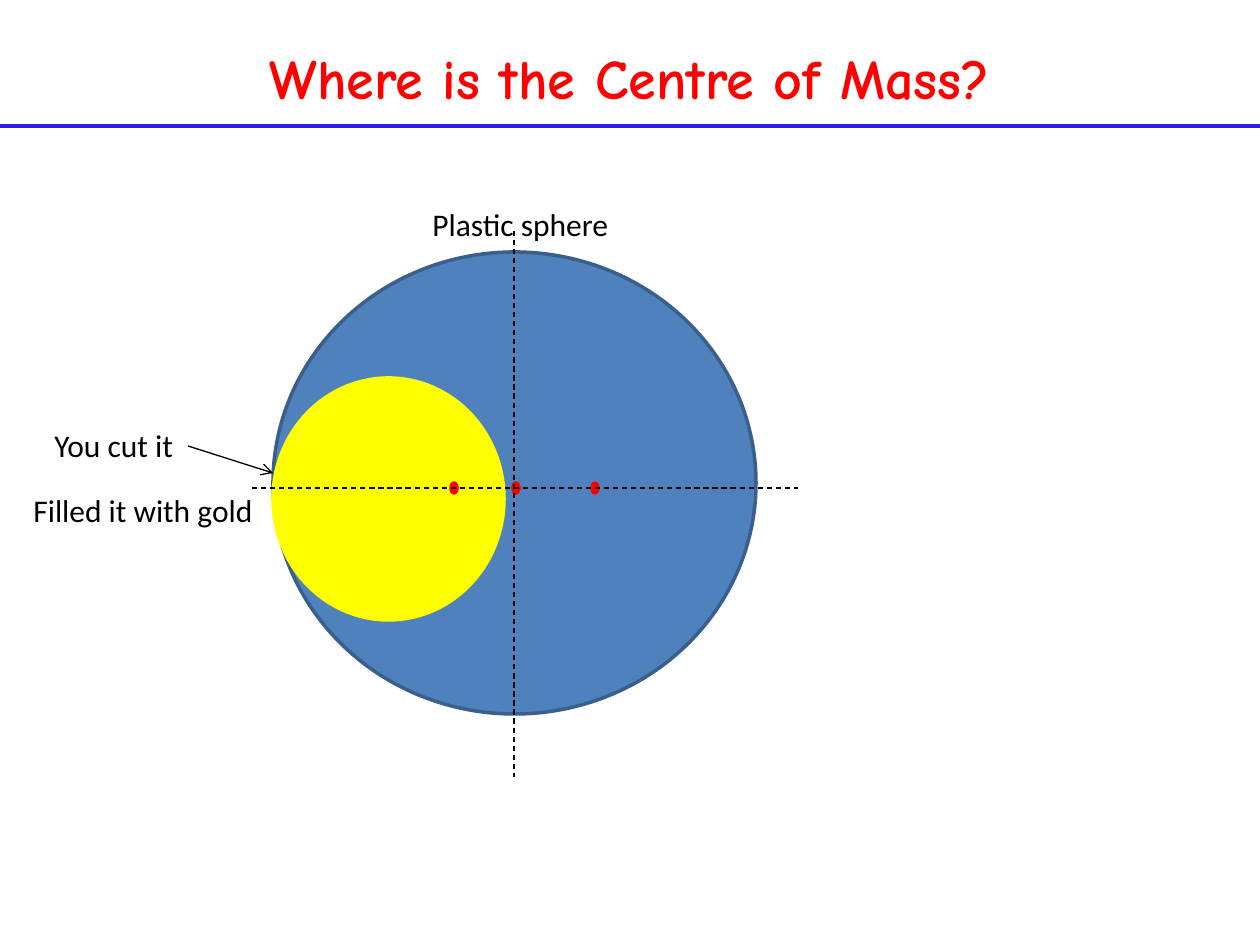
from lxml.etree import SubElement
from pptx import Presentation
from pptx.dml.color import RGBColor
from pptx.enum.dml import MSO_LINE
from pptx.enum.shapes import MSO_CONNECTOR, MSO_SHAPE
from pptx.enum.text import MSO_ANCHOR, MSO_AUTO_SIZE, PP_ALIGN
from pptx.oxml.ns import qn
from pptx.util import Emu, Pt

SCALE = 914400 / 126
COLORS = {
    "rule": "331AEC",
    "red": "FF0000",
    "blue": "4F81BD",
    "edge": "3A5F8C",
    "gold": "FFFF00",
    "ink": "000000",
}
TITLE = {"name": "Comic Neue", "size": Pt(32), "bold": True}
LABEL = {"name": "Calibri", "size": Pt(18), "bold": False}


def px(*values):
    return [Emu(round(v * SCALE)) for v in values]


def tint(name):
    return RGBColor.from_string(COLORS[name])


def add_text(slide, box, words, style, color, frame, align=PP_ALIGN.LEFT):
    text = slide.shapes.add_textbox(*px(*box)).text_frame
    for key, value in frame.items():
        setattr(text, key, value)
    line = text.paragraphs[0]
    line.alignment = align
    run = line.add_run()
    run.text = words
    for key, value in style.items():
        setattr(run.font, key, value)
    run.font.color.rgb = tint(color)


def add_label(slide, box, words):
    frame = {"word_wrap": False, "auto_size": MSO_AUTO_SIZE.SHAPE_TO_FIT_TEXT}
    add_text(slide, box, words, LABEL, "ink", frame)


def add_line(slide, ends, color="ink", width=0.75, dash=None, arrow=False):
    link = slide.shapes.add_connector(MSO_CONNECTOR.STRAIGHT, *px(*ends))
    link.line.color.rgb = tint(color)
    link.line.width = Pt(width)
    if dash:
        link.line.dash_style = dash
    if arrow:
        SubElement(link.line._get_or_add_ln(), qn("a:tailEnd"), type="arrow")
    SubElement(link._element.spPr, qn("a:effectLst"))


def add_oval(slide, box, fill, edge):
    oval = slide.shapes.add_shape(MSO_SHAPE.OVAL, *px(*box))
    oval.shadow.inherit = False
    oval.fill.solid()
    oval.fill.fore_color.rgb = tint(fill)
    oval.line.color.rgb = tint(edge)
    oval.line.width = Pt(2)


def add_header(slide, box):
    left, top, width, height = box
    add_line(slide, (left, top + height, left + width, top + height),
             "rule", 2.25)
    frame = {"word_wrap": True, "vertical_anchor": MSO_ANCHOR.MIDDLE}
    add_text(slide, (left + 63, top + 38, width - 126, 78),
             "Where is the Centre of Mass?", TITLE, "red", frame,
             PP_ALIGN.CENTER)


def add_sphere(slide, box):
    """Draw the sphere in box, with its gold part, mass centres and axes."""
    left, top, width, height = box
    add_oval(slide, box, "blue", "edge")
    add_oval(slide, (left, top + 126, 231, 242), "gold", "gold")
    for x in (178, 240, 319):
        add_oval(slide, (left + x, top + 231, 6, 10), "red", "red")
    add_label(slide, (left + 147, top - 53, 203, 50), "Plastic sphere")
    mid_x, mid_y = left + width // 2, top + 236
    for ends in ((mid_x, top - 21, mid_x, top + height + 63),
                 (left - 21, mid_y, left + width + 42, mid_y)):
        add_line(slide, ends, dash=MSO_LINE.DASH)


def add_notes(slide, box):
    """Label the gold part; the arrow ends at the right edge of box."""
    left, top, width, height = box
    add_label(slide, (left + 21, top, 145, 50), "You cut it")
    add_line(slide, (left + 167, top + 26, left + width, top + 53), arrow=True)
    add_label(slide, (left, top + height - 50, 247, 50), "Filled it with gold")


def main():
    deck = Presentation()
    deck.slide_width, deck.slide_height = px(1260, 945)
    slide = deck.slides.add_slide(deck.slide_layouts[6])
    add_header(slide, (0, 0, 1260, 126))
    add_sphere(slide, (273, 252, 483, 462))
    add_notes(slide, (21, 420, 252, 115))
    deck.save("out.pptx")


if __name__ == "__main__":
    main()
